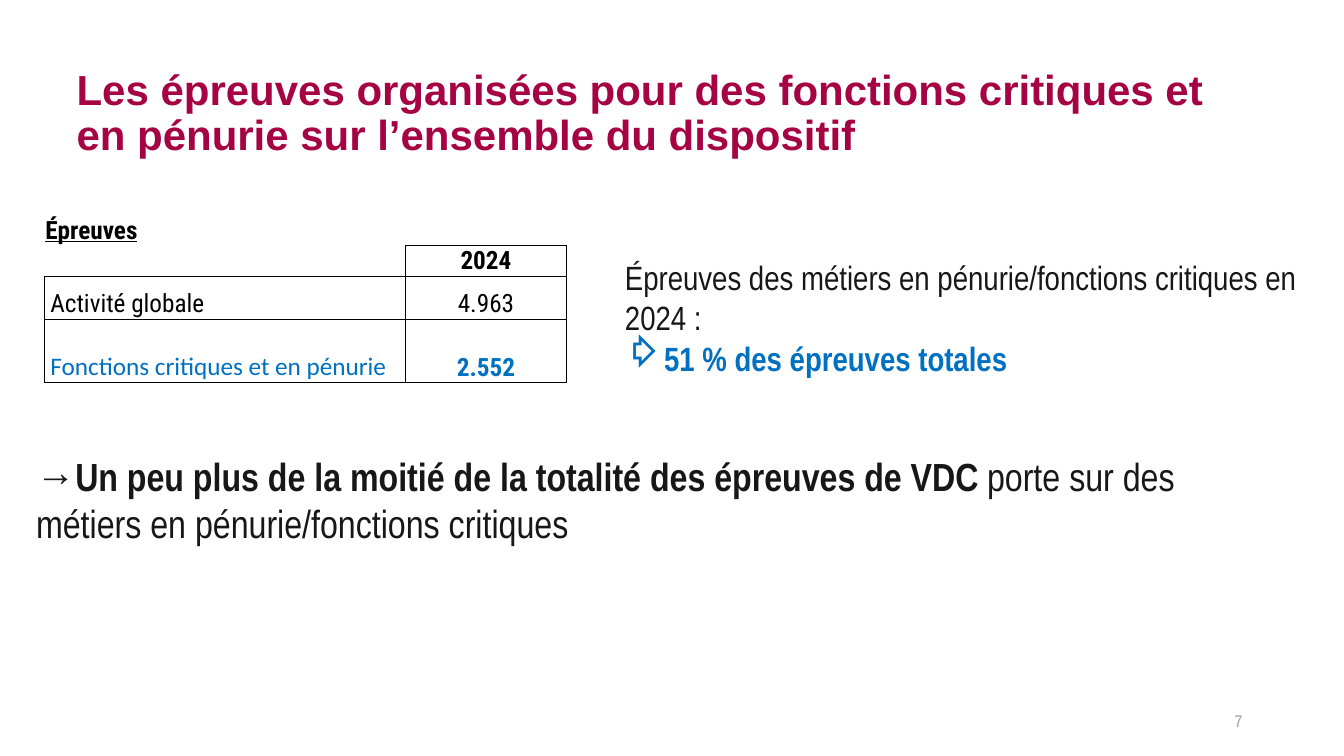
import dataclasses

import lxml.etree
import pptx
import pptx.dml.color
import pptx.enum.text
import pptx.oxml
import pptx.oxml.ns
import pptx.util

Inches = pptx.util.Inches
Anchor = pptx.enum.text.MSO_ANCHOR
Align = pptx.enum.text.PP_ALIGN
AutoSize = pptx.enum.text.MSO_AUTO_SIZE


@dataclasses.dataclass(frozen=True)
class Theme:
    title: str = "A50343"
    ink: str = "181717"
    black: str = "000000"
    accent: str = "0070C0"
    muted: str = "9B9B9B"
    title_font: str = "Arial"
    body_font: str = "Arial Narrow"
    table_font: str = "Roboto Condensed"
    label_font: str = "Calibri"
    title_size: int = 30
    message_size: int = 28
    body_size: int = 24
    table_size: int = 18
    number_size: int = 12
    border_width: float = 0.5


THEME = Theme()


def style_font(font, name, size, color, bold=False, underline=False):
    font.name = name
    font.size = pptx.util.Pt(size)
    font.color.rgb = pptx.dml.color.RGBColor.from_string(color)
    font.bold = bold
    font.underline = underline


def add_span(para, text, size, color=THEME.ink, bold=False):
    span = para.add_run()
    span.text = text
    style_font(span.font, THEME.body_font, size, color, bold)


def set_bullet(para, character, indent):
    properties = para._p.get_or_add_pPr()
    properties.set("marL", str(Inches(indent)))
    properties.set("indent", str(-Inches(indent)))
    bullet = pptx.oxml.parse_xml(
        f'<a:buChar {pptx.oxml.ns.nsdecls("a")} char="{character}"/>')
    properties.append(bullet)


def set_title(page, text):
    title = page.shapes.title
    title.left, title.top = Inches(0.66), Inches(0.41)
    title.width, title.height = Inches(11.5), Inches(1.45)
    frame = title.text_frame
    frame.text = text
    frame.word_wrap = True
    frame.auto_size = AutoSize.NONE
    frame.vertical_anchor = Anchor.MIDDLE
    para = frame.paragraphs[0]
    para.alignment = Align.LEFT
    para.line_spacing = 0.9
    style_font(para.runs[0].font, THEME.title_font, THEME.title_size,
               THEME.title, bold=True)


def add_text_box(page, left, top, width, height, anchor=Anchor.TOP):
    box = page.shapes.add_textbox(
        Inches(left), Inches(top), Inches(width), Inches(height))
    box.text_frame.word_wrap = True
    box.text_frame.vertical_anchor = anchor
    return box.text_frame


def set_borders(cell, visible_sides):
    properties = cell._tc.get_or_add_tcPr()
    for position, side in enumerate("LRTB"):
        line = lxml.etree.Element(pptx.oxml.ns.qn(f"a:ln{side}"))
        line.set("w", str(pptx.util.Pt(THEME.border_width)))
        if side in visible_sides:
            fill = lxml.etree.SubElement(line, pptx.oxml.ns.qn("a:solidFill"))
            color = lxml.etree.SubElement(fill, pptx.oxml.ns.qn("a:srgbClr"))
            color.set("val", THEME.black)
        else:
            lxml.etree.SubElement(line, pptx.oxml.ns.qn("a:noFill"))
        properties.insert(position, line)


def is_boxed(row, column):
    return (row in (2, 3) and column in (0, 1)) or (row, column) == (1, 1)


def bordered_sides(row, column):
    neighbours = {"L": (row, column - 1), "R": (row, column + 1),
                  "T": (row - 1, column), "B": (row + 1, column)}
    return [side for side, place in neighbours.items()
            if is_boxed(row, column) or is_boxed(*place)]


def fill_cell(cell, text, row, column):
    cell.fill.background()
    set_borders(cell, bordered_sides(row, column))
    cell.vertical_anchor = Anchor.BOTTOM
    cell.margin_left = Inches(0.06 if row > 1 and column == 0 else 0.01)
    cell.margin_right = cell.margin_top = Inches(0.01)
    cell.margin_bottom = Inches(0)
    para = cell.text_frame.paragraphs[0]
    para.text = text
    para.alignment = Align.CENTER if column else Align.LEFT
    critical = row == 3
    style_font(
        para.font,
        THEME.label_font if critical and column == 0 else THEME.table_font,
        THEME.table_size,
        THEME.accent if critical else THEME.black,
        bold=row < 2 or (critical and column == 1),
        underline=row == 0)
    for span in para.runs:
        style_font(span.font, para.font.name, THEME.table_size,
                   THEME.accent if critical else THEME.black,
                   para.font.bold, para.font.underline)


def add_activity_table(page):
    rows = [("Épreuves", ""), ("", "2024"), ("Activité globale", "4.963"),
            ("Fonctions critiques et en pénurie", "2.552")]
    table = page.shapes.add_table(
        len(rows), 2, Inches(0.44), Inches(2.13),
        Inches(5.18), Inches(1.6)).table
    table.first_row = table.horz_banding = False
    for column, width in zip(table.columns, (3.58, 1.6)):
        column.width = Inches(width)
    for row, height in zip(table.rows, (0.27, 0.27, 0.43, 0.63)):
        row.height = Inches(height)
    for row, texts in enumerate(rows):
        for column, text in enumerate(texts):
            fill_cell(table.cell(row, column), text, row, column)


def add_share(page):
    frame = add_text_box(page, 6.1, 2.5, 7.1, 1.31)
    add_span(frame.paragraphs[0],
             "Épreuves des métiers en pénurie/fonctions critiques en 2024 :",
             THEME.body_size)
    para = frame.add_paragraph()
    set_bullet(para, "⇨", 0.38)
    add_span(para, "51 % des épreuves totales", THEME.body_size,
             THEME.accent, bold=True)


def add_message(page):
    para = add_text_box(page, 0.26, 4.44, 12.61, 1.04).paragraphs[0]
    add_span(para, "→", THEME.message_size)
    add_span(para,
             "Un peu plus de la moitié de la totalité des épreuves de VDC ",
             THEME.message_size, bold=True)
    add_span(para, "porte sur des métiers en pénurie/fonctions critiques",
             THEME.message_size)


def add_page_number(page, number):
    para = add_text_box(page, 9.42, 6.95, 3, 0.4, Anchor.MIDDLE).paragraphs[0]
    para.alignment = Align.RIGHT
    add_span(para, number, THEME.number_size, THEME.muted)


def main():
    deck = pptx.Presentation()
    deck.slide_width, deck.slide_height = Inches(13.33), Inches(7.5)
    page = deck.slides.add_slide(deck.slide_layouts.get_by_name("Title Only"))
    set_title(page, "Les épreuves organisées pour des fonctions critiques et "
                    "en pénurie sur l’ensemble du dispositif")
    add_activity_table(page)
    add_share(page)
    add_page_number(page, "7")
    add_message(page)
    deck.save("out.pptx")


if __name__ == "__main__":
    main()
